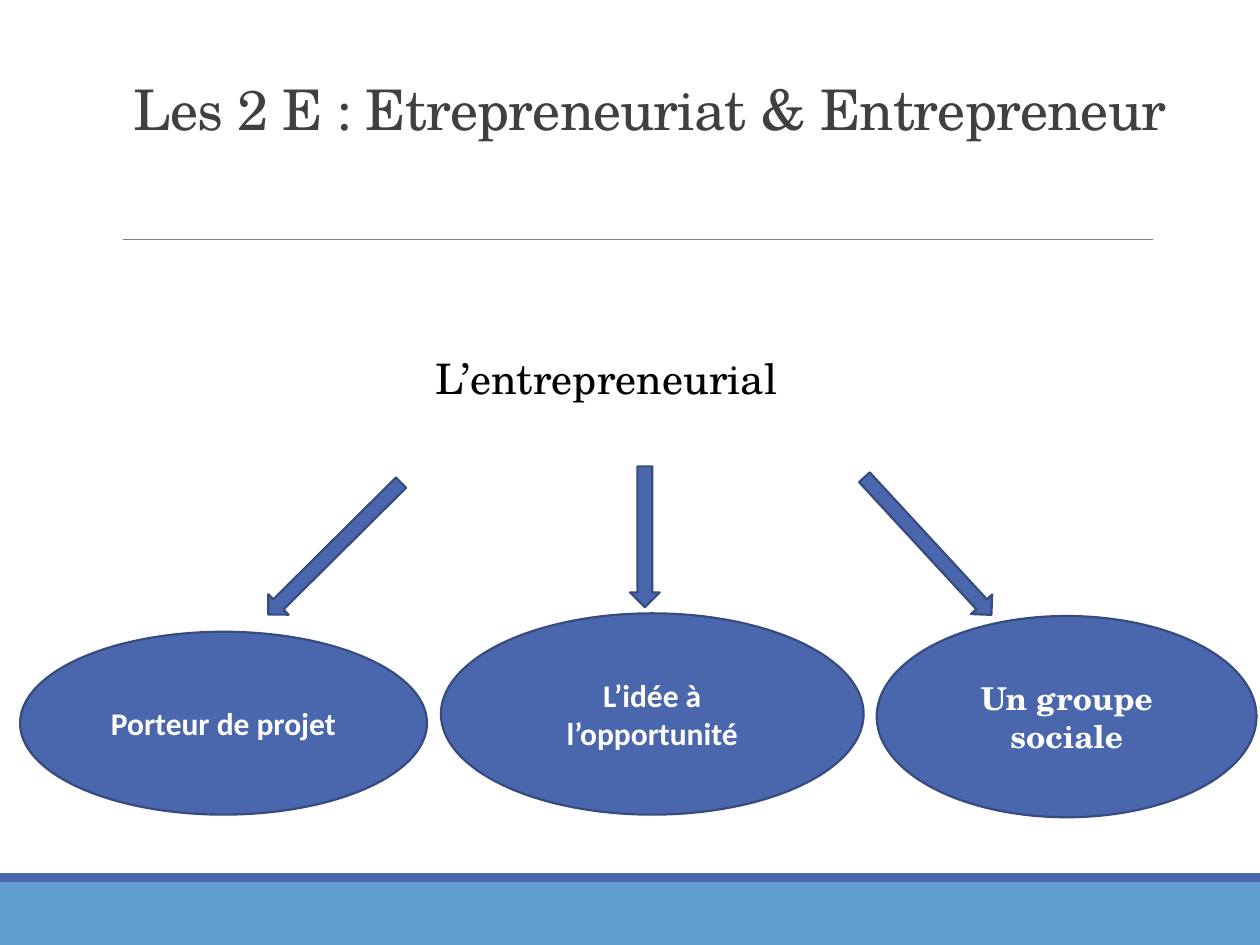
from lxml import etree
from pptx import Presentation
from pptx.dml.color import RGBColor
from pptx.enum.shapes import MSO_CONNECTOR as Connector, MSO_SHAPE as Shape
from pptx.enum.text import MSO_ANCHOR as Anchor, MSO_AUTO_SIZE as AutoSize, PP_ALIGN as Align
from pptx.oxml.ns import qn
from pptx.util import Pt

COLORS = {
    "band": "629DD1",
    "blue": "4A66AC",
    "outline": "374B7F",
    "rule": "808080",
    "title": "404040",
    "black": "000000",
    "white": "FFFFFF",
}
SERIF = "TeX Gyre Schola"
SANS = "Calibri"


class SlideBuilder:
    def __init__(self, slide):
        self.slide = slide

    def color(self, name):
        return RGBColor.from_string(COLORS[name])

    def place(self, shape, box):
        shape.left, shape.top, shape.width, shape.height = map(Pt, box)

    def add_text(self, shape, text, size, font, color, bold=False, anchor=Anchor.MIDDLE):
        frame = shape.text_frame
        frame.word_wrap = True
        frame.auto_size = AutoSize.NONE
        frame.vertical_anchor = anchor
        paragraph = frame.paragraphs[0]
        paragraph.alignment = Align.CENTER
        paragraph.space_before = Pt(0)
        run = paragraph.add_run()
        run.text = text
        run.font.size = Pt(size)
        run.font.name = font
        run.font.bold = bold
        run.font.color.rgb = self.color(color)
        return paragraph, run

    def title(self, text, box):
        shape = self.slide.shapes.title
        self.place(shape, box)
        paragraph, run = self.add_text(shape, text, 32, SERIF, "title", anchor=Anchor.BOTTOM)
        paragraph.line_spacing = 0.85
        run._r.get_or_add_rPr().set("spc", "-50")

    def body(self, text, box, top_margin, right_margin):
        shape = self.slide.placeholders[1]
        self.place(shape, box)
        frame = shape.text_frame
        frame.margin_top, frame.margin_right = Pt(top_margin), Pt(right_margin)
        paragraph, _ = self.add_text(shape, text, 24, SERIF, "black", anchor=Anchor.TOP)
        properties = paragraph._p.get_or_add_pPr()
        properties.set("marL", "0")
        properties.set("indent", "0")
        etree.SubElement(properties, qn("a:buNone"))

    def shape(self, kind, box, fill="blue", outline="outline", rotation=0):
        shape = self.slide.shapes.add_shape(kind, *map(Pt, box))
        shape.shadow.inherit = False
        shape.rotation = rotation
        shape.fill.solid()
        shape.fill.fore_color.rgb = self.color(fill)
        if outline:
            shape.line.color.rgb = self.color(outline)
            shape.line.width = Pt(1.25)
        else:
            shape.line.fill.background()
        return shape

    def ellipse(self, text, font, box):
        shape = self.shape(Shape.OVAL, box)
        frame = shape.text_frame
        frame.margin_left = frame.margin_right = Pt(10)
        self.add_text(shape, text, 18, font, "white", bold=True)

    def rule(self, left, right, top):
        line = self.slide.shapes.add_connector(
            Connector.STRAIGHT, Pt(left), Pt(top), Pt(right), Pt(top))
        line.line.color.rgb = self.color("rule")
        line.line.width = Pt(0.5)
        etree.SubElement(line._element.spPr, qn("a:effectLst"))


def main():
    presentation = Presentation()
    presentation.slide_width, presentation.slide_height = Pt(720), Pt(540)
    slide = presentation.slides.add_slide(presentation.slide_layouts[1])
    builder = SlideBuilder(slide)

    builder.shape(Shape.RECTANGLE, (0, 504, 720, 36), "band", None)
    builder.shape(Shape.RECTANGLE, (0, 499, 720, 5), "blue", None)
    builder.rule(70.5, 659, 136.8)
    builder.title("Les 2 E : Etrepreneuriat & Entrepreneur", (54, 33, 635, 52))
    builder.body("L’entrepreneurial", (0, 168.5, 720, 211), 33, 34)

    for text, font, box in (
        ("Porteur de projet", SANS, (11.5, 361, 232.5, 104.5)),
        ("L’idée à l’opportunité", SANS, (252, 350.5, 241.5, 115)),
        ("Un groupe sociale", SERIF, (501, 352, 217, 115)),
    ):
        builder.ellipse(text, font, box)

    for box, rotation in (
        ((360, 266.5, 17, 80.5), 0),
        ((522, 258.5, 16.5, 107), 317.3),
        ((183, 260, 16.5, 107), 45.2),
    ):
        builder.shape(Shape.DOWN_ARROW, box, rotation=rotation)

    presentation.save("out.pptx")


if __name__ == "__main__":
    main()
